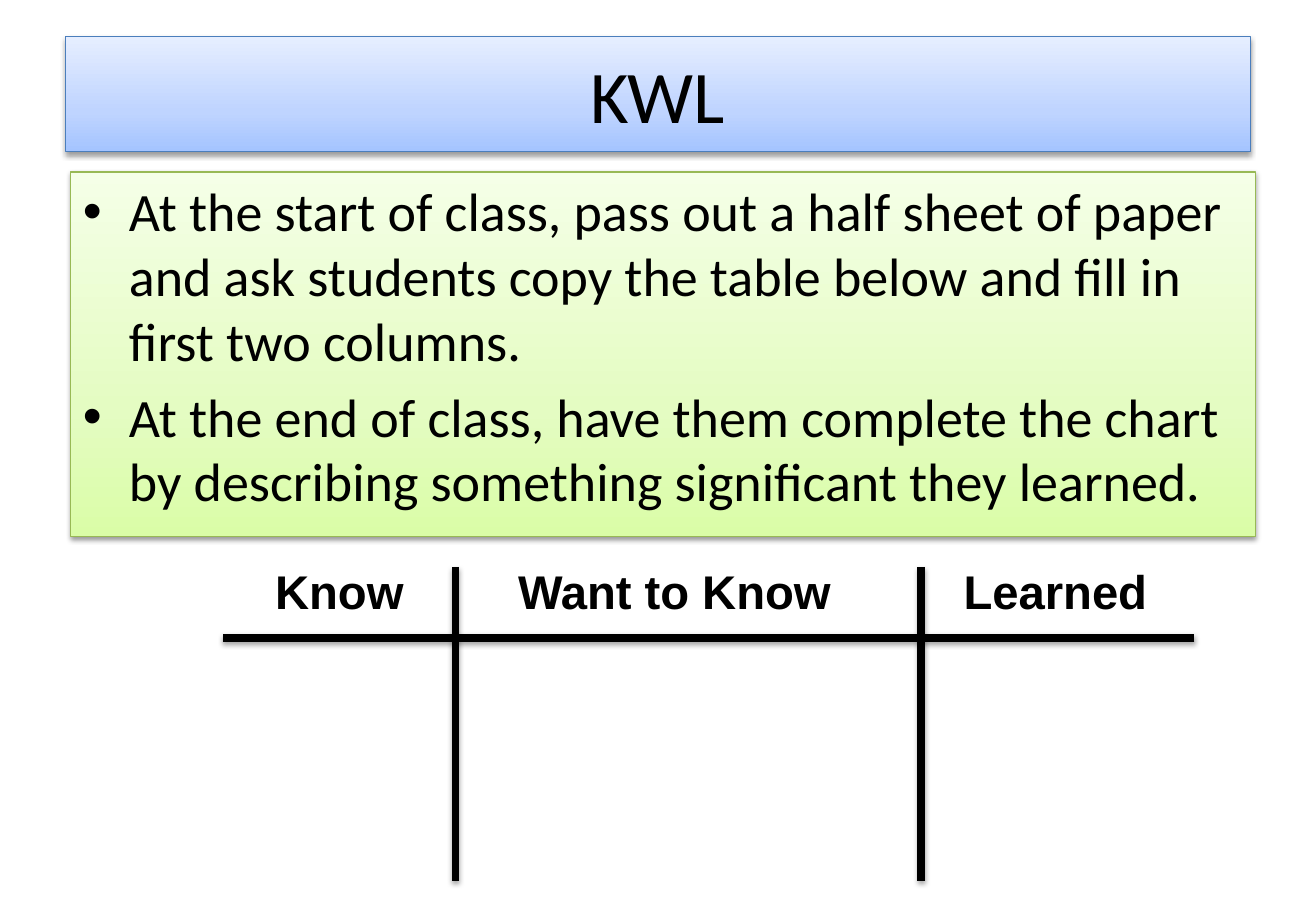
from copy import deepcopy
from dataclasses import dataclass

from lxml import etree
from pptx import Presentation
from pptx.dml.color import RGBColor
from pptx.enum.shapes import MSO_CONNECTOR, MSO_SHAPE
from pptx.enum.text import MSO_ANCHOR, MSO_AUTO_SIZE, PP_ALIGN
from pptx.oxml import parse_xml
from pptx.oxml.ns import qn
from pptx.util import Inches, Pt

RECT = MSO_SHAPE.RECTANGLE
LINE = MSO_CONNECTOR.STRAIGHT
TOP, MIDDLE = MSO_ANCHOR.TOP, MSO_ANCHOR.MIDDLE
LEFT, CENTER = PP_ALIGN.LEFT, PP_ALIGN.CENTER
GROW = MSO_AUTO_SIZE.SHAPE_TO_FIT_TEXT

# The grid has twelve units to the inch
COLS, ROWS = 130, 90
UNIT = Inches(1) / 12


@dataclass(frozen=True)
class Theme:
    ink: str = "000000"
    blue: tuple = ("A4C4FF", "BFD4FF", "E6EEFF")
    blue_edge: str = "4B7EBC"
    green: tuple = ("DAFDA7", "E4FCC2", "F5FFE7")
    green_edge: str = "98B955"
    stops: tuple = (0, 0.35, 1)
    sans: str = "Calibri"
    head: str = "Arial"
    title: float = 44
    body: float = 32
    label: float = 28
    edge: float = 0.75
    rule: float = 4.5


THEME = Theme()


def grid(*units):
    return [round(n * UNIT) for n in units]


def color(code):
    return RGBColor.from_string(code)


def style(para, font, size, bold=False):
    for run in para.runs:
        run.font.name = font
        run.font.size = Pt(size)
        run.font.bold = bold
        run.font.color.rgb = color(THEME.ink)


def shade(shape, alpha, drop):
    """Add a soft shadow straight below the shape."""
    props = shape._element.spPr
    for old in props.findall(qn("a:effectLst")):
        props.remove(old)
    props.append(parse_xml(
        '<a:effectLst xmlns:a="http://schemas.openxmlformats.org/drawingml/2006/main">'
        f'<a:outerShdw blurRad="{Pt(3.1)}" dist="{Pt(drop)}" dir="5400000" rotWithShape="0">'
        f'<a:srgbClr val="{THEME.ink}"><a:alpha val="{alpha * 1000}"/></a:srgbClr>'
        '</a:outerShdw></a:effectLst>'))


def panel(slide, box, fills, edge):
    """Draw a bordered box with an upward gradient."""
    shape = slide.shapes.add_shape(RECT, *grid(*box))
    shape.fill.gradient()
    shape.fill.gradient_angle = 90
    first = shape._element.spPr.find(".//" + qn("a:gs"))
    first.addnext(deepcopy(first))
    for stop, spot, code in zip(shape.fill.gradient_stops, THEME.stops, fills):
        stop.position = spot
        stop.color.rgb = color(code)
    shape.line.color.rgb = color(edge)
    shape.line.width = Pt(THEME.edge)
    shade(shape, 38, 1.6)
    shape.text_frame.word_wrap = True
    return shape.text_frame


def title(slide, box, text):
    frame = panel(slide, box, THEME.blue, THEME.blue_edge)
    frame.vertical_anchor = MIDDLE
    frame.text = text
    para = frame.paragraphs[0]
    para.alignment = CENTER
    style(para, THEME.sans, THEME.title)


def steps(slide, box, items):
    frame = panel(slide, box, THEME.green, THEME.green_edge)
    frame.vertical_anchor = TOP
    frame.text = "\n".join(items)
    for para in frame.paragraphs:
        para.alignment = LEFT
        para.space_before = Pt(THEME.body * 0.2)
        style(para, THEME.sans, THEME.body)
        # Hanging bullet
        props = para._p.get_or_add_pPr()
        indent = Inches(0.38)
        props.set("marL", str(indent))
        props.set("indent", str(-indent))
        etree.SubElement(props, qn("a:buFont")).set("typeface", THEME.head)
        etree.SubElement(props, qn("a:buChar")).set("char", "•")


def rule(slide, *ends):
    line = slide.shapes.add_connector(LINE, *grid(*ends))
    line.line.color.rgb = color(THEME.ink)
    line.line.width = Pt(THEME.rule)
    shade(line, 35, 1.8)


def chart(slide, box, labels, splits):
    left, top, width, height = box
    # Column headings
    for text, col, span in labels:
        area = slide.shapes.add_textbox(*grid(left + col, top - 1, span, 6.8))
        frame = area.text_frame
        frame.word_wrap = False
        frame.auto_size = GROW
        frame.text = text
        style(frame.paragraphs[0], THEME.head, THEME.label, True)
    # Column dividers and the line below the headings
    for col in splits:
        rule(slide, left + col, top, left + col, top + height)
    rule(slide, left + width, top + 7, left, top + 7)


def main():
    deck = Presentation()
    deck.slide_width, deck.slide_height = grid(COLS, ROWS)
    slide = deck.slides.add_slide(deck.slide_layouts[6])
    title(slide, (6.5, 3.6, 117, 11.4), "KWL")
    steps(slide, (7, 17, 117, 36), (
        "At the start of class, pass out a half sheet of paper and ask students "
        "copy the table below and fill in first two columns.",
        "At the end of class, have them complete the chart by describing "
        "something significant they learned."))
    chart(slide, (22, 56, 96, 31),
          (("Know", 4, 15.4), ("Want to Know", 28, 33.8), ("Learned", 72, 20.8)),
          (23, 69))
    deck.save("out.pptx")


if __name__ == "__main__":
    main()
